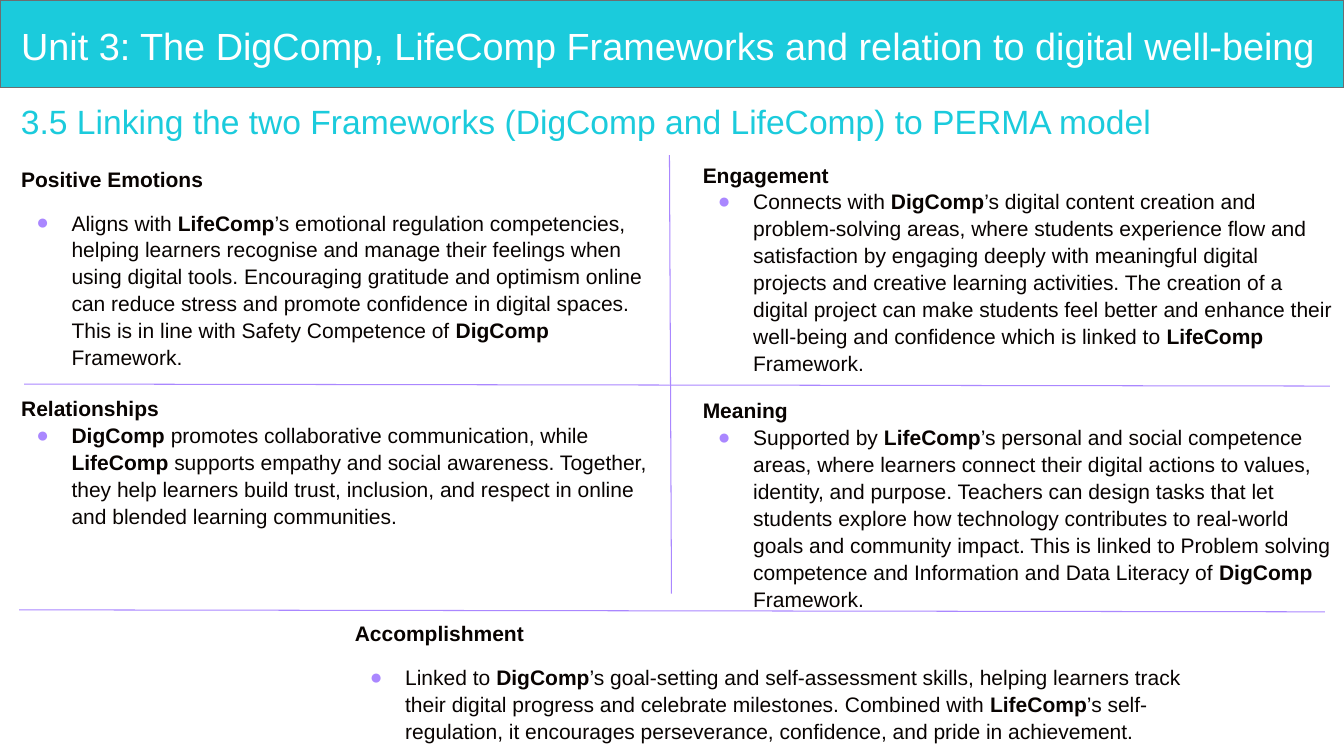
from lxml.etree import SubElement
from pptx import Presentation
from pptx.dml.color import RGBColor
from pptx.enum.shapes import MSO_CONNECTOR, MSO_SHAPE
from pptx.enum.text import MSO_ANCHOR, MSO_AUTO_SIZE, PP_ALIGN
from pptx.oxml.ns import qn
from pptx.util import Inches, Pt

COLORS = {"band": "1BCBDC", "edge": "6C6E70", "white": "FFFFFF",
          "text": "080301", "accent": "AA87FF"}
FONT = "Arial"
TITLE = "Unit 3: The DigComp, LifeComp Frameworks and relation to digital well-being"
SUBTITLE = "3.5 Linking the two Frameworks (DigComp and LifeComp) to PERMA model"

# Double asterisks enclose bold words.
SECTIONS = [
    {"heading": "Positive Emotions", "box": (0.11, 1.6, 6.46, 2.33),
     "heading_format": {"space_before": Pt(12), "line_spacing": 1.0},
     "body_format": {"space_before": Pt(12)},
     "body": "Aligns with **LifeComp**’s emotional regulation competencies, helping learners "
             "recognise and manage their feelings when using digital tools. Encouraging gratitude "
             "and optimism online can reduce stress and promote confidence in digital spaces. This "
             "is in line with Safety Competence of **DigComp **Framework."},
    {"heading": "Relationships", "box": (0.11, 3.86, 6.46, 2.15),
     "body": "**DigComp **promotes collaborative communication, while **LifeComp **supports "
             "empathy and social awareness. Together, they help learners build trust, inclusion, "
             "and respect in online and blended learning communities."},
    {"heading": "Engagement", "box": (6.87, 1.54, 6.46, 2.15),
     "body": "Connects with **DigComp**’s digital content creation and problem-solving areas, "
             "where students experience flow and satisfaction by engaging deeply with meaningful "
             "digital projects and creative learning activities. The creation of a digital project "
             "can make students feel better and enhance their well-being and confidence which is "
             "linked to** LifeComp** Framework."},
    {"heading": "Meaning", "box": (6.87, 3.88, 6.46, 2.15),
     "body": "Supported by **LifeComp**’s personal and social competence areas, where learners "
             "connect their digital actions to values, identity, and purpose. Teachers can design "
             "tasks that let students explore how technology contributes to real-world goals and "
             "community impact. This is linked to Problem solving competence and Information and "
             "Data Literacy of **DigComp** Framework."},
    {"heading": "Accomplishment", "box": (3.42, 6.09, 8.72, 1.28),
     "body_format": {"space_before": Pt(12), "space_after": Pt(12)},
     "body": "Linked to **DigComp**’s goal-setting and self-assessment skills, helping learners "
             "track their digital progress and celebrate milestones. Combined with** LifeComp**’s "
             "self-regulation, it encourages perseverance, confidence, and pride in achievement."},
]
DIVIDERS = [(0.24, 3.81, 13.19, 3.83), (6.64, 1.54, 6.66, 5.89), (0.19, 6.05, 13.14, 6.07)]
PARA_FORMAT = {"alignment": PP_ALIGN.LEFT, "line_spacing": 1.07,
               "space_before": Pt(0), "space_after": Pt(0)}


def color(name):
    return RGBColor.from_string(COLORS[name])


def set_all(target, values):
    for name, value in values.items():
        setattr(target, name, value)


def place(box, bounds, **frame_format):
    """Position a text shape and return its frame with fixed size and insets."""
    set_all(box, dict(zip(("left", "top", "width", "height"), map(Inches, bounds))))
    frame = box.text_frame
    set_all(frame, {"word_wrap": True, "auto_size": MSO_AUTO_SIZE.NONE,
                    "vertical_anchor": MSO_ANCHOR.TOP,
                    "margin_left": Inches(0.1), "margin_right": Inches(0.1),
                    "margin_top": Inches(0.05), "margin_bottom": Inches(0.05),
                    **frame_format})
    return frame


def write(para, text, size, tone, bullet=False, **para_format):
    set_all(para, {**PARA_FORMAT, **para_format})
    props = para._p.get_or_add_pPr()
    props.set("marL", str(Inches(0.5) if bullet else 0))
    props.set("indent", str(Inches(-0.35) if bullet else 0))
    if bullet:
        tint = SubElement(props, qn("a:buClr"))
        SubElement(tint, qn("a:srgbClr"), val=COLORS["accent"])
        SubElement(props, qn("a:buFont"), typeface=FONT)
        SubElement(props, qn("a:buChar"), char="●")
    else:
        SubElement(props, qn("a:buNone"))
    for number, piece in enumerate(text.split("**")):
        if piece:
            span = para.add_run()
            span.text = piece
            set_all(span.font, {"name": FONT, "size": Pt(size), "bold": number % 2 == 1})
            span.font.color.rgb = color(tone)


def add_band(page):
    band = page.shapes.add_shape(MSO_SHAPE.RECTANGLE, 0, 0, Inches(13.33), Inches(0.87))
    band.shadow.inherit = False
    band.fill.solid()
    band.fill.fore_color.rgb = color("band")
    band.line.color.rgb = color("edge")
    band.line.width = Pt(1)
    page.shapes._spTree.insert(2, band._element)  # behind the title


def add_divider(page, ends):
    divider = page.shapes.add_connector(MSO_CONNECTOR.STRAIGHT, *map(Inches, ends))
    divider.line.color.rgb = color("accent")
    divider.line.width = Pt(0.75)
    SubElement(divider._element.spPr, qn("a:effectLst"))


def main():
    deck = Presentation()
    deck.slide_width, deck.slide_height = Inches(13.33), Inches(7.5)
    page = deck.slides.add_slide(deck.slide_layouts[4])  # title and four bodies
    title, *bodies = page.placeholders
    add_band(page)

    frame = place(title, (0.11, 0.09, 13.06, 0.78), vertical_anchor=MSO_ANCHOR.MIDDLE,
                  margin_right=Inches(0.06), margin_top=Inches(0.06),
                  margin_bottom=Inches(0.06))
    write(frame.paragraphs[0], TITLE, 27, "white", line_spacing=0.9)

    subtitle, closing = (page.shapes.add_textbox(0, 0, 0, 0) for _ in range(2))
    frame = place(subtitle, (0.11, 0.93, 13.06, 0.6), vertical_anchor=MSO_ANCHOR.MIDDLE)
    write(frame.paragraphs[0], SUBTITLE, 24, "band", line_spacing=0.9,
          alignment=PP_ALIGN.JUSTIFY)

    for box, section in zip([*bodies, closing], SECTIONS):
        frame = place(box, section["box"])
        write(frame.paragraphs[0], f"**{section['heading']}**", 15, "text",
              **section.get("heading_format", {}))
        write(frame.add_paragraph(), section["body"], 15, "text", bullet=True,
              **section.get("body_format", {}))

    for ends in DIVIDERS:
        add_divider(page, ends)
    deck.save("out.pptx")


if __name__ == "__main__":
    main()
